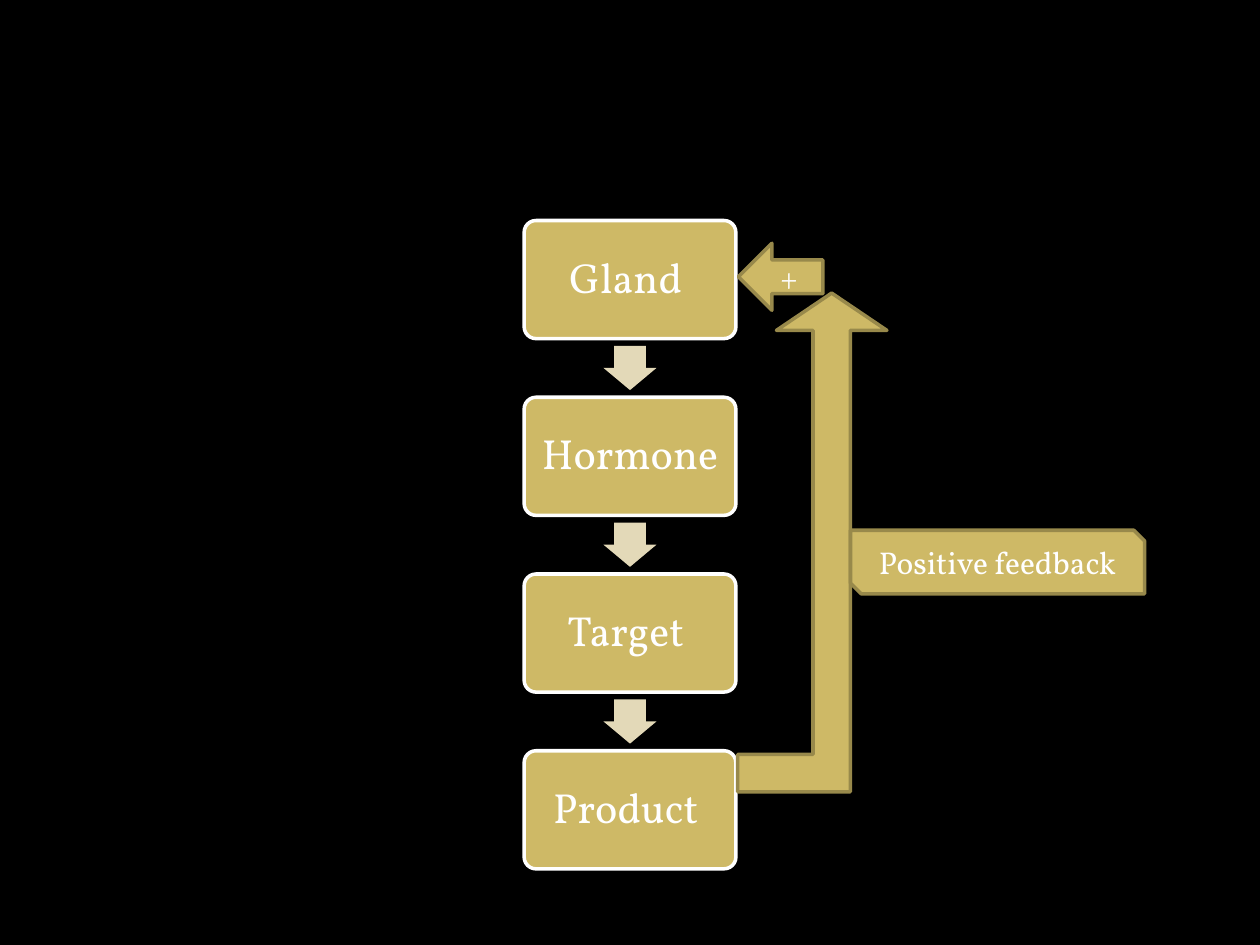
from dataclasses import dataclass

import pptx
import pptx.dml.color
import pptx.enum.shapes
import pptx.enum.text
import pptx.util

Pt = pptx.util.Pt
Preset = pptx.enum.shapes.MSO_SHAPE

COLOURS = {
    "background": "000000",
    "gold": "CEB966",
    "pale gold": "E3D9B8",
    "dark gold": "98894B",
    "white": "FFFFFF",
}
FONT = "Vollkorn"

STAGES = ["Gland ", "Hormone ", "Target ", "Product "]
CENTRE_X = 360
STAGE_TOP, STAGE_PITCH = 126, 101
STAGE_WIDTH, STAGE_HEIGHT = 121, 67.5
STEP_LENGTH, STEP_WIDTH = 25.3, 30.3


@dataclass
class Block:
    preset: Preset
    left: float
    top: float
    width: float
    height: float
    fill: str = "gold"
    line: str | None = "dark gold"
    adjustments: tuple[float, ...] = ()
    rotation: float = 0
    text: str = ""
    size: float = 18
    spacing: float = 1.0


def colour(name: str) -> pptx.dml.color.RGBColor:
    return pptx.dml.color.RGBColor.from_string(COLOURS[name])


def write_text(shape, block: Block) -> None:
    frame = shape.text_frame
    frame.word_wrap = True
    frame.vertical_anchor = pptx.enum.text.MSO_ANCHOR.MIDDLE
    frame.text = block.text
    para = frame.paragraphs[0]
    para.alignment = pptx.enum.text.PP_ALIGN.CENTER
    para.line_spacing = block.spacing
    font = para.runs[0].font
    font.name = FONT
    font.size = Pt(block.size)
    font.color.rgb = colour("white")


def draw_block(page, block: Block):
    shape = page.shapes.add_shape(
        block.preset, Pt(block.left), Pt(block.top), Pt(block.width), Pt(block.height)
    )
    shape.shadow.inherit = False
    shape.rotation = block.rotation
    for index, value in enumerate(block.adjustments):
        shape.adjustments[index] = value
    shape.fill.solid()
    shape.fill.fore_color.rgb = colour(block.fill)
    if block.line:
        shape.line.color.rgb = colour(block.line)
        shape.line.width = Pt(2)
    else:
        shape.line.fill.background()
    if block.text:
        write_text(shape, block)
    return shape


def draw_stages(page) -> None:
    gap = STAGE_PITCH - STAGE_HEIGHT
    for index, name in enumerate(STAGES):
        top = STAGE_TOP + index * STAGE_PITCH
        box = draw_block(page, Block(
            Preset.ROUNDED_RECTANGLE, CENTRE_X - STAGE_WIDTH / 2, top,
            STAGE_WIDTH, STAGE_HEIGHT, line="white", adjustments=(0.1,),
            text=name, size=24, spacing=0.9,
        ))
        box.text_frame.margin_top = box.text_frame.margin_bottom = Pt(7.2)
        if index < len(STAGES) - 1:
            # The step arrow is turned about its centre, midway in the gap
            middle = top + STAGE_HEIGHT + gap / 2
            draw_block(page, Block(
                Preset.RIGHT_ARROW, CENTRE_X - STEP_LENGTH / 2, middle - STEP_WIDTH / 2,
                STEP_LENGTH, STEP_WIDTH, fill="pale gold", line=None,
                adjustments=(0.6, 0.5), rotation=90,
            ))


def draw_feedback(page) -> None:
    for block in (
        Block(Preset.BENT_UP_ARROW, 421.5, 167.5, 85.3, 285,
              adjustments=(0.25, 0.37, 0.25)),
        Block(Preset.LEFT_ARROW, 422, 139, 48.3, 38.3, text="+"),
        Block(Preset.SNIP_2_DIAG_RECTANGLE, 486, 303, 168, 36.3,
              text="Positive feedback"),
    ):
        draw_block(page, block)


def main() -> None:
    deck = pptx.Presentation()
    deck.slide_width, deck.slide_height = Pt(720), Pt(540)
    page = deck.slides.add_slide(deck.slide_layouts[6])
    page.background.fill.solid()
    page.background.fill.fore_color.rgb = colour("background")

    # Chain from gland to product
    draw_stages(page)
    # Loop from product back to gland
    draw_feedback(page)
    deck.save("out.pptx")


if __name__ == "__main__":
    main()
